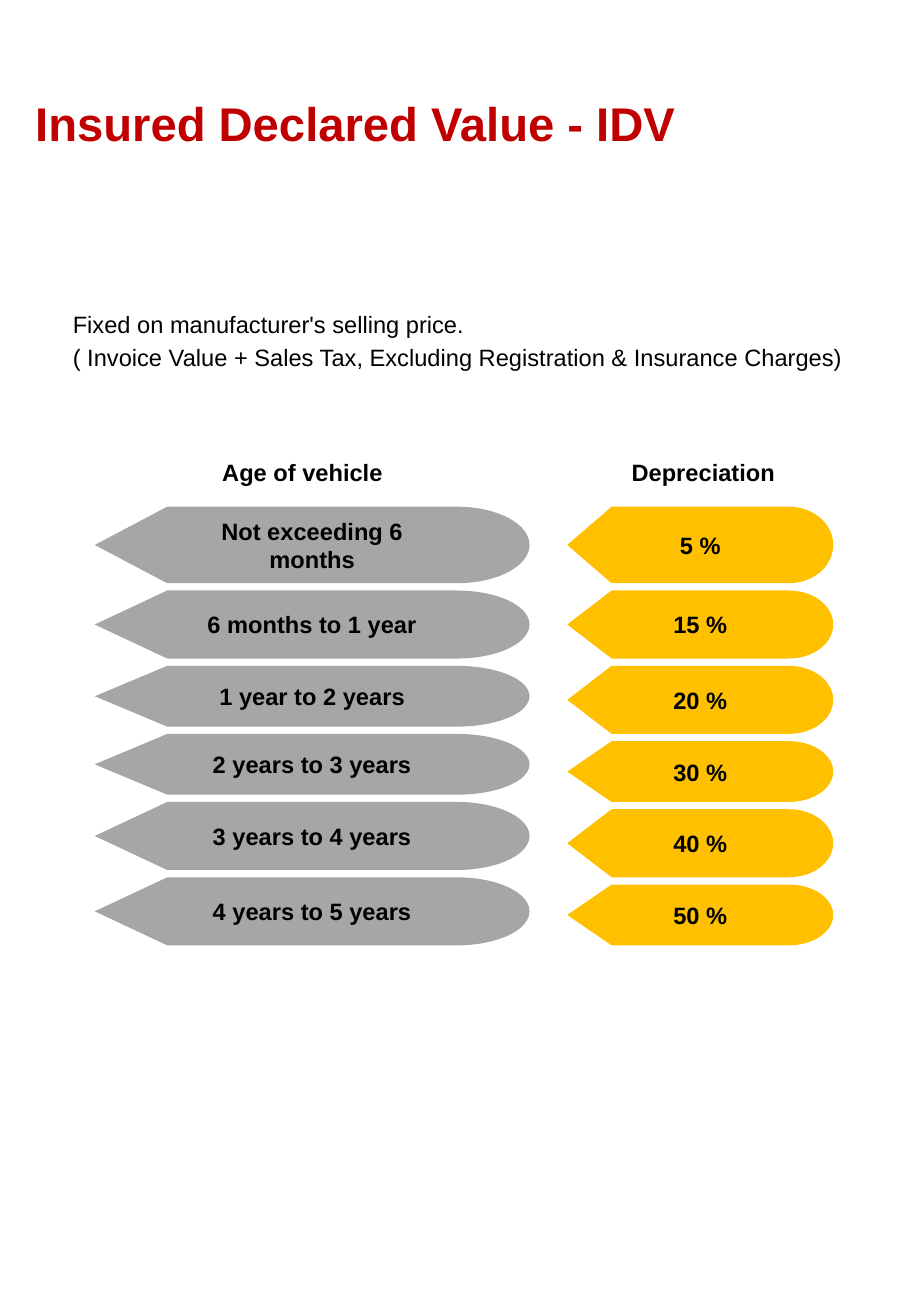
from pptx import Presentation
from pptx.dml.color import RGBColor
from pptx.enum.shapes import MSO_SHAPE as SHAPE
from pptx.enum.text import MSO_ANCHOR as ANCHOR, PP_ALIGN as ALIGN
from pptx.util import Inches, Pt

RED = RGBColor(0xC0, 0x00, 0x00)
BLACK = RGBColor(0x00, 0x00, 0x00)
GREY = RGBColor(0xA6, 0xA6, 0xA6)
AMBER = RGBColor(0xFF, 0xC0, 0x00)

prs = Presentation()
prs.slide_width, prs.slide_height = Inches(7.5), Inches(10.83)
slide = prs.slides.add_slide(prs.slide_layouts[6])


def add_run(paragraph, text, size=14, color=BLACK, bold=True):
    run = paragraph.add_run()
    run.text = text
    run.font.name = "Arial"
    run.font.size = Pt(size)
    run.font.color.rgb = color
    run.font.bold = bold


def add_frame(left, top, width, height):
    """Add a wrapping text box without margins and return its text frame."""
    box = slide.shapes.add_textbox(Inches(left), Inches(top), Inches(width), Inches(height))
    frame = box.text_frame
    frame.word_wrap = True
    frame.margin_left = frame.margin_right = frame.margin_top = frame.margin_bottom = 0
    return frame


title = add_frame(0.29, 0.43, 6.92, 1.16)
title.vertical_anchor = ANCHOR.MIDDLE
add_run(title.paragraphs[0], "Insured Declared Value - IDV", 28, RED)

basis = add_frame(0.6, 2.58, 6.6, 0.5)
basis_lines = [
    "Fixed on manufacturer's selling price.",
    "( Invoice Value + Sales Tax, Excluding Registration & Insurance Charges)",
]
for i, line in enumerate(basis_lines):
    paragraph = basis.add_paragraph() if i else basis.paragraphs[0]
    paragraph.line_spacing = 0.9
    if i:
        paragraph.space_before = Pt(4)
    add_run(paragraph, line, bold=False)

# Heading, heading left, column left, column width, colour, (label, height) rows
columns = [
    ("Age of vehicle", 1.83, 0.78, 3.58, GREY, [
        ("Not exceeding 6 months", 0.63), ("6 months to 1 year", 0.56),
        ("1 year to 2 years", 0.5), ("2 years to 3 years", 0.5),
        ("3 years to 4 years", 0.56), ("4 years to 5 years", 0.56)]),
    ("Depreciation", 5.2, 4.67, 2.19, AMBER, [
        ("5 %", 0.63), ("15 %", 0.56), ("20 %", 0.56),
        ("30 %", 0.5), ("40 %", 0.56), ("50 %", 0.5)]),
]
ROWS_TOP, ROW_GAP = 4.17, 0.06

for heading, heading_left, left, width, color, rows in columns:
    add_run(add_frame(heading_left, 3.77, 1.6, 0.25).paragraphs[0], heading)
    top = ROWS_TOP
    for label, height in rows:
        band = slide.shapes.add_shape(SHAPE.FLOWCHART_DISPLAY, Inches(left), Inches(top),
                                      Inches(width), Inches(height))
        band.shadow.inherit = False
        band.fill.solid()
        band.fill.fore_color.rgb = color
        band.line.fill.background()
        band.text_frame.word_wrap = True
        band.text_frame.vertical_anchor = ANCHOR.MIDDLE
        paragraph = band.text_frame.paragraphs[0]
        paragraph.alignment = ALIGN.CENTER
        add_run(paragraph, label)
        top += height + ROW_GAP

prs.save("out.pptx")
